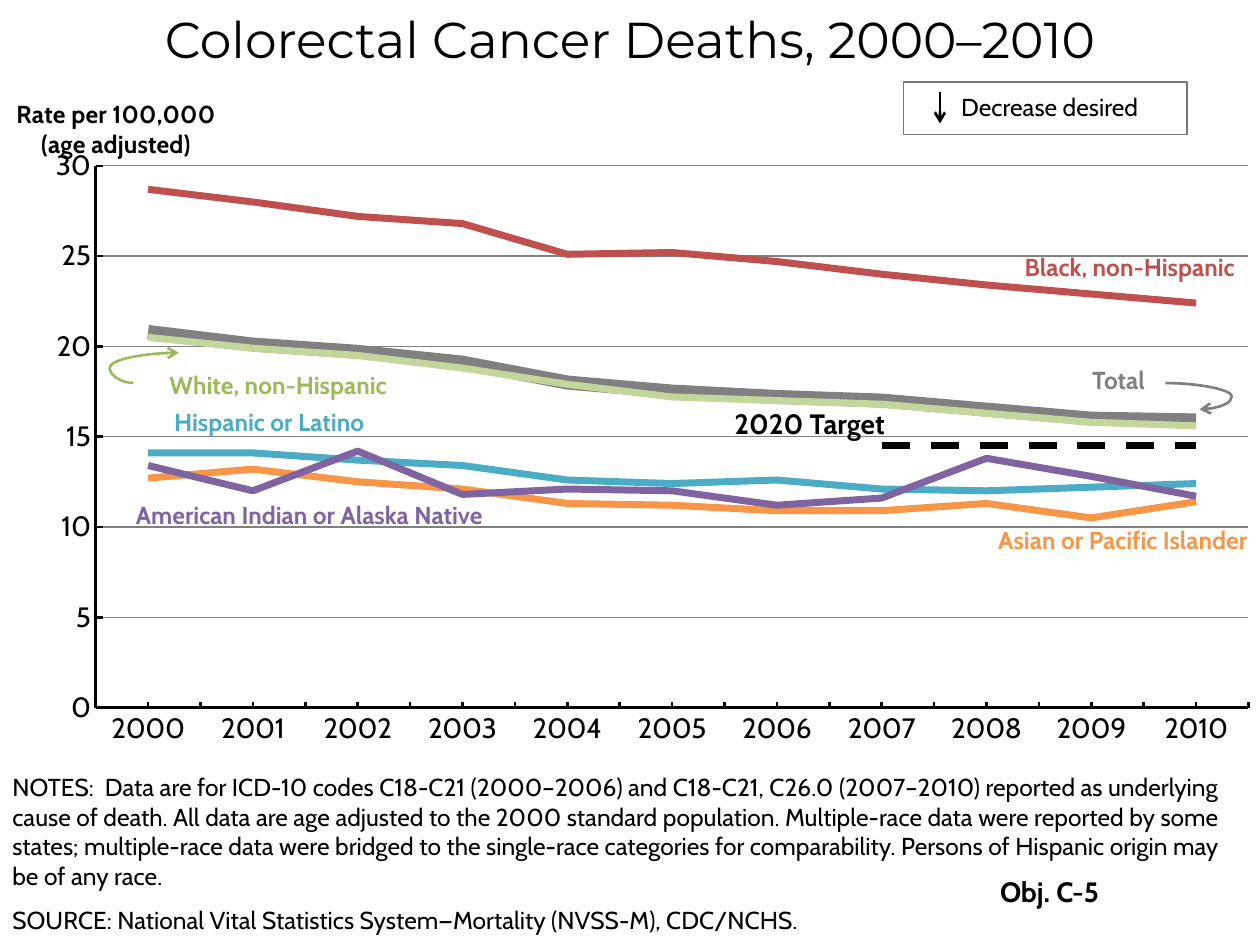
from typing import NamedTuple, Optional

from lxml import etree
from pptx import Presentation
from pptx import util as u
from pptx.chart.data import CategoryChartData
from pptx.dml.color import RGBColor
from pptx.enum import chart as charts, dml, shapes, text
from pptx.oxml import parse_xml
from pptx.oxml.ns import nsdecls, qn

BLACK = RGBColor(0x00, 0x00, 0x00)
GRAY = RGBColor(0x80, 0x80, 0x80)
BORDER = RGBColor(0x77, 0x77, 0x77)
PALE_GREEN = RGBColor(0xC3, 0xD6, 0x9B)
GREEN = RGBColor(0x9B, 0xBB, 0x59)
TEAL = RGBColor(0x4B, 0xAC, 0xC6)
RED = RGBColor(0xC0, 0x50, 0x4D)
ORANGE = RGBColor(0xF7, 0x96, 0x46)
PURPLE = RGBColor(0x80, 0x64, 0xA2)
BODY_FONT = "Cabin"
LEFT, CENTER, RIGHT = text.PP_ALIGN.LEFT, text.PP_ALIGN.CENTER, text.PP_ALIGN.RIGHT
YEARS = [str(year) for year in range(2000, 2011)]


class Series(NamedTuple):
    color: RGBColor
    values: list
    width: float = 4
    dash: Optional[dml.MSO_LINE] = None


class Label(NamedTuple):
    wording: str
    area: tuple
    color: RGBColor = BLACK
    align: text.PP_ALIGN = LEFT
    size: float = 14
    bold: bool = True


class Arrow(NamedTuple):
    start: tuple
    end: tuple
    color: RGBColor
    bend: Optional[float] = None


SERIES = [
    Series(GRAY, [20.8, 20.1, 19.7, 19.1, 18, 17.5, 17.2, 17, 16.5, 16, 15.9], width=8),
    Series(PALE_GREEN, [20.5, 19.9, 19.5, 18.8, 17.9, 17.2, 17, 16.8, 16.3, 15.8, 15.6]),
    Series(TEAL, [14.1, 14.1, 13.7, 13.4, 12.6, 12.4, 12.6, 12.1, 12, 12.2, 12.4]),
    Series(RED, [28.7, 28, 27.2, 26.8, 25.1, 25.2, 24.7, 24, 23.4, 22.9, 22.4]),
    Series(ORANGE, [12.7, 13.2, 12.5, 12.1, 11.3, 11.2, 10.9, 10.9, 11.3, 10.5, 11.4]),
    Series(PURPLE, [13.4, 12, 14.2, 11.8, 12.1, 12, 11.2, 11.6, 13.8, 12.8, 11.7]),
    Series(BLACK, [None] * 7 + [14.5] * 4, dash=dml.MSO_LINE.DASH),
]

LABELS = [
    Label("Black, non-Hispanic", (7.7, 1.95, 2.2, 0.34), RED, RIGHT),
    Label("Total", (8.57, 2.85, 1.35, 0.25), GRAY),
    Label("White, non-Hispanic", (0.58, 2.89, 2.59, 0.36), GREEN, RIGHT),
    Label("Hispanic or Latino", (0.97, 3.18, 2.02, 0.23), TEAL, RIGHT),
    Label("American Indian or Alaska Native", (0.98, 3.92, 3.6, 0.47), PURPLE),
    Label("Asian or Pacific Islander", (7.17, 4.12, 2.83, 0.4), ORANGE, RIGHT),
    Label("2020 Target", (5.73, 3.18, 1.61, 0.38), size=16),
    Label(
        "NOTES:  Data are for ICD-10 codes C18-C21 (2000–2006) and C18-C21, C26.0 (2007–2010) "
        "reported as underlying cause of death. All data are age adjusted to the 2000 standard "
        "population. Multiple-race data were reported by some states; multiple-race data were "
        "bridged to the single-race categories for comparability. Persons of Hispanic origin "
        "may be of any race.",
        (0, 6.08, 10, 0.99), bold=False),
    Label("SOURCE: National Vital Statistics System—Mortality (NVSS-M), CDC/NCHS.",
          (0, 7.13, 6.96, 0.37), bold=False),
    Label("Obj. C-5", (6.97, 6.89, 1.85, 0.61), align=RIGHT, size=16),
]

ARROWS = [
    Arrow((9.25, 3.04), (9.52, 3.25), GRAY, bend=1.948),
    Arrow((1.06, 3.04), (1.42, 2.8), GREEN, bend=-0.526),
]


def inches(lengths: tuple) -> list:
    """Turn plain numbers into slide lengths."""
    return [u.Inches(length) for length in lengths]


def style_font(font, *, size: float, color: RGBColor = BLACK, bold: bool = False,
               name: str = BODY_FONT) -> None:
    """Set the typeface, size, weight and colour of a font."""
    font.name, font.size, font.bold = name, u.Pt(size), bold
    font.color.rgb = color


def add_text(parent, wording: str, area: tuple, *, align=LEFT, anchor=text.MSO_ANCHOR.TOP,
             spacing: Optional[float] = None, **font_format) -> None:
    """Place one wrapped paragraph in a text box."""
    box = parent.add_textbox(*inches(area))
    frame = box.text_frame
    frame.word_wrap = True
    frame.vertical_anchor = anchor
    para = frame.paragraphs[0]
    para.alignment = align
    para.line_spacing = spacing
    span = para.add_run()
    span.text = wording
    style_font(span.font, **font_format)


def add_arrow(parent, arrow: Arrow) -> None:
    """Draw a straight or curved connector with an open arrowhead."""
    kind = shapes.MSO_CONNECTOR.STRAIGHT if arrow.bend is None else shapes.MSO_CONNECTOR.CURVE
    connector = parent.add_connector(kind, *inches(arrow.start + arrow.end))
    connector.line.color.rgb = arrow.color
    connector.line.width = u.Pt(1.5)
    properties = connector.element.spPr
    etree.SubElement(properties.find(qn("a:ln")), qn("a:tailEnd"), type="arrow")
    etree.SubElement(properties, qn("a:effectLst"))
    if arrow.bend is not None:
        guides = properties.find(qn("a:prstGeom")).get_or_add_avLst()
        etree.SubElement(guides, qn("a:gd"), name="adj1", fmla=f"val {round(arrow.bend * 100000)}")


def layout_xml(target: str, **places: float):
    """Build a manual chart layout from fractions of the chart area."""
    inner = '<c:layoutTarget val="inner"/>' if target == "inner" else ""
    modes = '<c:xMode val="edge"/><c:yMode val="edge"/>'
    values = "".join(f'<c:{key} val="{value}"/>' for key, value in places.items())
    return parse_xml(f'<c:layout {nsdecls("c")}><c:manualLayout>{inner}{modes}{values}'
                     "</c:manualLayout></c:layout>")


def style_axis(axis) -> None:
    """Give an axis its line and label font."""
    axis.format.line.color.rgb = BLACK
    axis.format.line.width = u.Pt(1.5)
    style_font(axis.tick_labels.font, size=16)


def add_axis_title(axis) -> None:
    """Write the horizontal two-line title above the value axis."""
    title = axis.axis_title
    frame = title.text_frame
    frame.text = "Rate per 100,000\n(age adjusted)"
    for para in frame.paragraphs:
        para.alignment = CENTER
        style_font(para.runs[0].font, size=14, bold=True)
    body = frame._txBody.find(qn("a:bodyPr"))
    body.set("rot", "0")
    body.set("vert", "horz")
    element = title._element
    for old in element.findall(qn("c:layout")):
        element.remove(old)
    element.find(qn("c:tx")).addnext(layout_xml("outer", x=0.01, y=0.02))


def add_death_chart(slide) -> None:
    """Plot the death rates by group and the target."""
    data = CategoryChartData(number_format="0.0")
    data.categories = YEARS
    for number, series in enumerate(SERIES, 1):
        data.add_series(f"Series {number}", series.values)
    chart = slide.shapes.add_chart(charts.XL_CHART_TYPE.LINE,
                                   *inches((0, 0.63, 10, 5.45)), data).chart
    chart.has_legend = False
    chart.has_title = False
    style_font(chart.font, size=18, name="Calibri")
    plot = chart.plots[0]
    plot.vary_by_categories = False
    for drawn, series in zip(plot.series, SERIES):
        drawn.smooth = False
        drawn.marker.style = charts.XL_MARKER_STYLE.NONE
        drawn.format.line.color.rgb = series.color
        drawn.format.line.width = u.Pt(series.width)
        if series.dash:
            drawn.format.line.dash_style = series.dash
    years, rates = chart.category_axis, chart.value_axis
    style_axis(years)
    style_axis(rates)
    years.major_tick_mark = charts.XL_TICK_MARK.NONE
    years.minor_tick_mark = charts.XL_TICK_MARK.INSIDE
    rates.major_tick_mark = charts.XL_TICK_MARK.INSIDE
    rates.minimum_scale, rates.maximum_scale, rates.major_unit = 0, 30, 5
    rates.tick_labels.number_format = "0"
    rates.tick_labels.number_format_is_linked = False
    rates.major_gridlines.format.line.color.rgb = GRAY
    rates.major_gridlines.format.line.width = u.Pt(0.75)
    add_axis_title(rates)
    area = chart._chartSpace.chart.plotArea
    for old in area.findall(qn("c:layout")):
        area.remove(old)
    area.insert(0, layout_xml("inner", x=0.076, y=0.126, w=0.915, h=0.789))


def add_key(slide) -> None:
    """Draw the framed key that shows the desired direction."""
    parts = slide.shapes.add_group_shape().shapes
    add_text(parts, "Decrease desired", (7.53, 0.76, 1.88, 0.25), spacing=0.6, size=14)
    frame = parts.add_shape(shapes.MSO_SHAPE.RECTANGLE, *inches((7.17, 0.65, 2.25, 0.42)))
    frame.shadow.inherit = False
    frame.fill.background()
    frame.line.color.rgb = BORDER
    frame.line.width = u.Pt(0.75)
    add_arrow(parts, Arrow((7.46, 0.73), (7.46, 0.98), BLACK))


def main() -> None:
    """Build the slide and save it."""
    deck = Presentation()
    deck.slide_width, deck.slide_height = inches((10, 7.5))
    page = deck.slides.add_slide(deck.slide_layouts[6])
    add_text(page.shapes, "Colorectal Cancer Deaths, 2000–2010", (0, 0, 10, 0.61), align=CENTER,
             anchor=text.MSO_ANCHOR.MIDDLE, size=28.8, name="Montserrat")
    add_death_chart(page)
    add_key(page)
    for label in LABELS:
        add_text(page.shapes, label.wording, label.area, align=label.align, size=label.size,
                 color=label.color, bold=label.bold)
    for arrow in ARROWS:
        add_arrow(page.shapes, arrow)
    deck.save("out.pptx")


if __name__ == "__main__":
    main()
